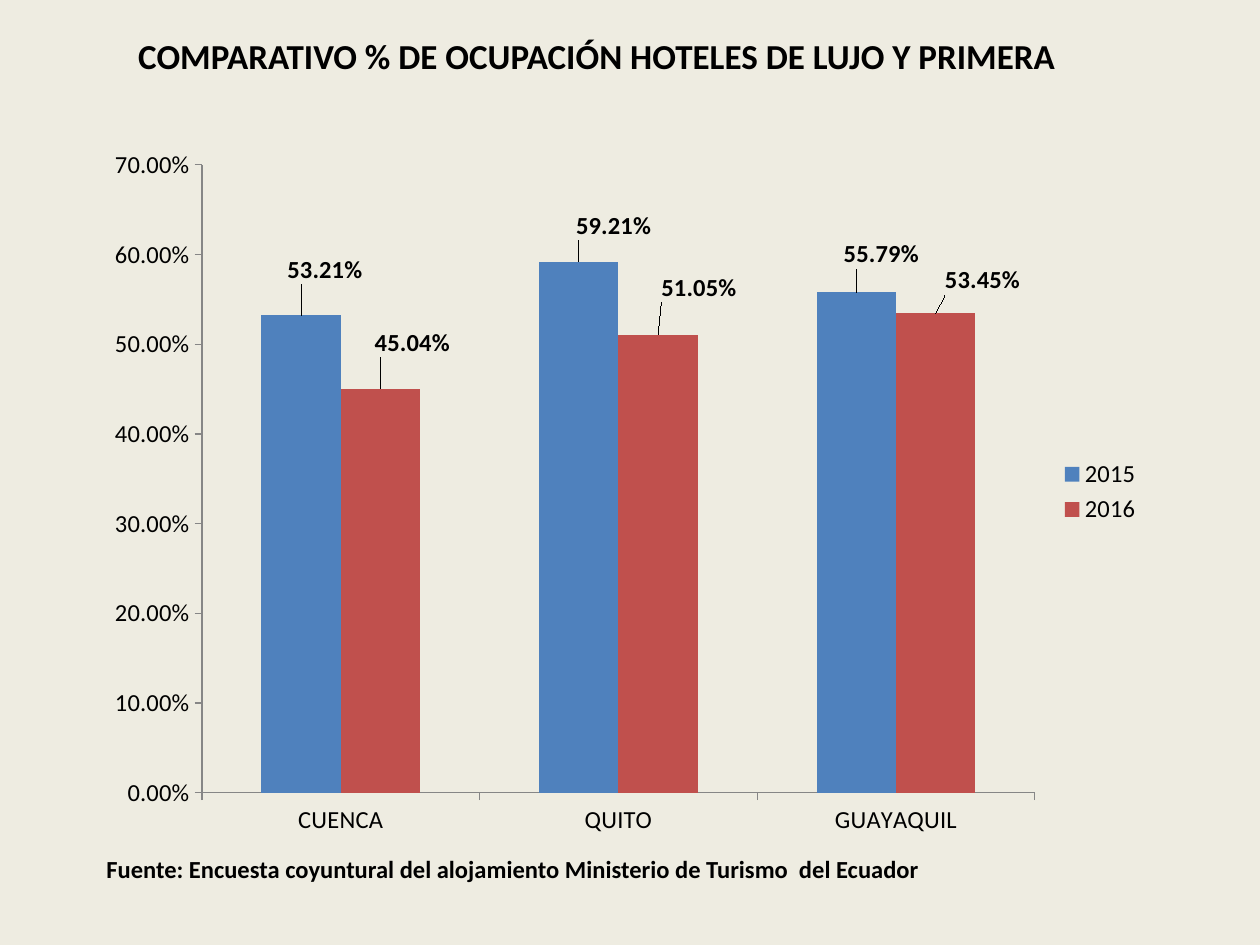
"""Build a slide comparing hotel occupancy in three cities."""
from dataclasses import dataclass

from lxml.etree import SubElement
from pptx import Presentation
from pptx.chart.data import CategoryChartData
from pptx.dml.color import RGBColor
from pptx.enum.chart import XL_CHART_TYPE as ChartType
from pptx.enum.chart import XL_LABEL_POSITION as LabelPosition
from pptx.enum.chart import XL_LEGEND_POSITION as LegendPosition
from pptx.enum.chart import XL_TICK_MARK as TickMark
from pptx.enum.text import MSO_ANCHOR as Anchor
from pptx.enum.text import MSO_AUTO_SIZE as AutoSize
from pptx.enum.text import PP_ALIGN as Align
from pptx.oxml.ns import qn
from pptx.util import Emu, Pt

PX = 914400 // 126
PERCENT = "0.00%"


@dataclass(frozen=True)
class Theme:
    font: str = "Calibri"
    title_size: int = 20
    body_size: int = 14
    ink: str = "000000"
    paper: str = "EEECE1"
    axis: str = "868686"
    series: tuple = ("4F81BD", "C0504D")


def rgb(value):
    return RGBColor.from_string(value)


def add_layout(parent, index, **settings):
    for old in parent.findall(qn("c:layout")):
        parent.remove(old)
    layout = SubElement(parent, qn("c:layout"))
    manual = SubElement(layout, qn("c:manualLayout"))
    for tag, value in settings.items():
        SubElement(manual, qn(f"c:{tag}")).set("val", str(value))
    parent.insert(index, layout)


class SlideBuilder:
    def __init__(self, deck, theme):
        self.theme = theme
        self.page = deck.slides.add_slide(deck.slide_layouts[5])
        fill = self.page.background.fill
        fill.solid()
        fill.fore_color.rgb = rgb(theme.paper)

    def style_font(self, font, size, bold=False):
        font.name = self.theme.font
        font.size = Pt(size)
        font.bold = bold
        font.color.rgb = rgb(self.theme.ink)

    def set_text(self, box, text, size, align):
        frame = box.text_frame
        frame.text = text
        frame.word_wrap = True
        frame.auto_size = AutoSize.NONE
        frame.vertical_anchor = Anchor.MIDDLE
        para = frame.paragraphs[0]
        para.alignment = align
        self.style_font(para.font, size, bold=True)

    def title(self, text, left, top, width, height):
        box = self.page.shapes.title
        box.left, box.top = Emu(left * PX), Emu(top * PX)
        box.width, box.height = Emu(width * PX), Emu(height * PX)
        self.set_text(box, text, self.theme.title_size, Align.CENTER)

    def text(self, text, left, top, width, height):
        box = self.page.shapes.add_textbox(*(Emu(n * PX) for n in (left, top, width, height)))
        self.set_text(box, text, self.theme.body_size, Align.LEFT)

    def column_chart(self, categories, series, shifts, frame, plot_frame):
        data = CategoryChartData(number_format=PERCENT)
        data.categories = categories
        for name, values in series.items():
            data.add_series(name, values)
        left, top, width, height = frame
        chart = self.page.shapes.add_chart(
            ChartType.COLUMN_CLUSTERED, *(Emu(n * PX) for n in frame), data).chart
        chart.has_title = False
        self.style_font(chart.font, self.theme.body_size)
        chart.has_legend = True
        chart.legend.position = LegendPosition.RIGHT
        chart.legend.include_in_layout = False

        for axis in (chart.category_axis, chart.value_axis):
            axis.has_major_gridlines = False
            axis.major_tick_mark = TickMark.OUTSIDE
            axis.minor_tick_mark = TickMark.NONE
            axis.format.line.color.rgb = rgb(self.theme.axis)
            axis.format.line.width = Pt(0.75)
        chart.value_axis.minimum_scale = 0
        chart.value_axis.maximum_scale = 0.7
        chart.value_axis.major_unit = 0.1
        chart.value_axis.tick_labels.number_format = PERCENT
        chart.value_axis.tick_labels.number_format_is_linked = False

        plot = chart.plots[0]
        plot.gap_width = 150
        plot.overlap = 0
        plot.vary_by_categories = False
        for bars, color, moves in zip(plot.series, self.theme.series, shifts):
            bars.format.fill.solid()
            bars.format.fill.fore_color.rgb = rgb(color)
            bars.invert_if_negative = False
            labels = bars.data_labels
            labels.show_value = True
            labels.number_format = PERCENT
            labels.number_format_is_linked = False
            self.style_font(labels.font, self.theme.body_size, bold=True)
            for index, (across, down) in enumerate(moves):
                label = bars.points[index].data_label
                label.position = LabelPosition.OUTSIDE_END
                self.style_font(label.font, self.theme.body_size, bold=True)
                node = labels._element.findall(qn("c:dLbl"))[index]
                add_layout(node, 1, x=round(across / width, 4), y=round(down / height, 4))

        x, y, w, h = plot_frame
        area = chart._chartSpace.chart.plotArea
        add_layout(area, 0, layoutTarget="inner", xMode="edge", yMode="edge",
                   x=round((x - left) / width, 4), y=round((y - top) / height, 4),
                   w=round(w / width, 4), h=round(h / height, 4))


def main():
    deck = Presentation()
    deck.slide_width, deck.slide_height = Emu(1260 * PX), Emu(945 * PX)
    slide = SlideBuilder(deck, Theme())
    slide.column_chart(
        categories=("CUENCA", "QUITO", "GUAYAQUIL"),
        series={"2015": (0.5321, 0.5921, 0.5579), "2016": (0.4504, 0.5105, 0.5345)},
        shifts=(((24, -26), (35, -16), (25, -18)), ((32, -26), (41, -27), (47, -13))),
        frame=(94, 135, 1060, 714),
        plot_frame=(202, 165, 833, 628))
    slide.title("COMPARATIVO % DE OCUPACIÓN HOTELES DE LUJO Y PRIMERA", 122, 28, 950, 55)
    slide.text("Fuente: Encuesta coyuntural del alojamiento Ministerio de Turismo  del Ecuador",
               94, 847, 963, 43)
    deck.save("out.pptx")


if __name__ == "__main__":
    main()
